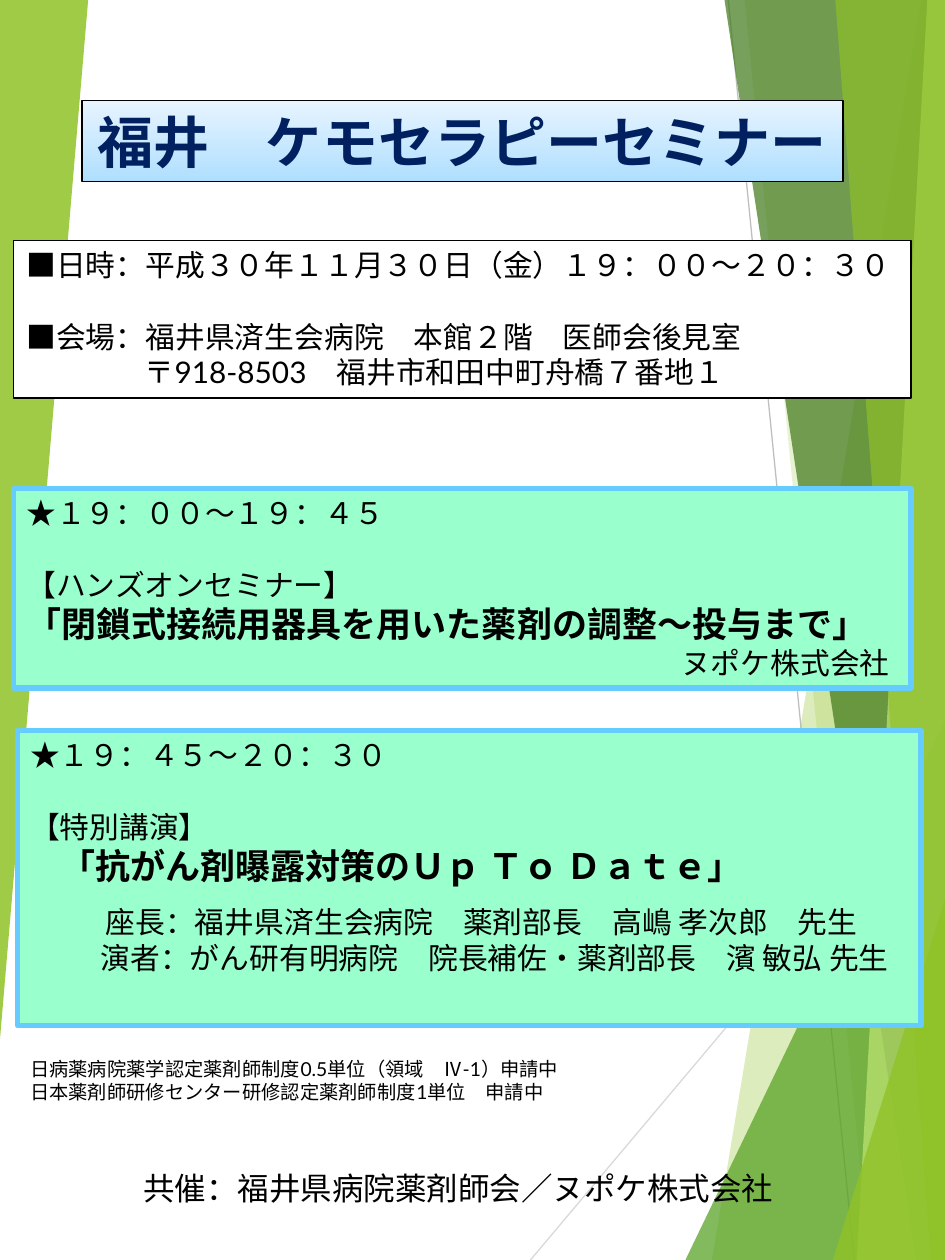
from lxml.etree import SubElement
from pptx import Presentation
from pptx.dml.color import RGBColor
from pptx.enum.shapes import MSO_CONNECTOR
from pptx.enum.text import MSO_ANCHOR, MSO_AUTO_SIZE, PP_ALIGN
from pptx.oxml.ns import qn
from pptx.util import Inches, Pt

FONT = "Lato"
BODY = 17
BLANK = 20.5

RAYS = [
    ((4.21, 10), (7.5, 6.09), "D9D9D9"),
    ((5.78, 0), (6.78, 10), "BFBFBF"),
]
FACETS = [
    ([(7.31, 0), (5.65, 10), (7.5, 10), (7.5, 0)], "90C226", 30),
    ([(5.91, 0), (6.9, 10), (7.5, 10), (7.5, 0)], "90C226", 20),
    ([(5.44, 10), (7.5, 5.72), (7.5, 10)], "54A021", 72),
    ([(5.75, 0), (7.27, 10), (7.5, 10), (7.5, 0)], "3F7819", 70),
    ([(7.36, 0), (6.8, 10), (7.5, 10), (7.5, 0)], "C0E474", 70),
    ([(6.63, 0), (7.39, 10), (7.5, 10), (7.5, 0)], "90C226", 65),
    ([(6.61, 10), (7.5, 7.14), (7.5, 10)], "90C226", 80),
    ([(0, 0), (0.7, 0), (0, 8.25)], "90C226", 85),
]


def color(value):
    """Turn a hex string into a colour."""
    return RGBColor.from_string(value)


def add_ray(page, start, end, shade):
    """Draw a thin background line."""
    ray = page.shapes.add_connector(
        MSO_CONNECTOR.STRAIGHT, *[Inches(value) for value in start + end])
    ray.line.color.rgb = color(shade)
    ray.line.width = Pt(0.75)
    SubElement(ray._element.spPr, qn("a:effectLst"))


def add_facet(page, corners, shade, opacity):
    """Draw a translucent background polygon."""
    points = [(Inches(x), Inches(y)) for x, y in corners]
    builder = page.shapes.build_freeform(*points[0])
    builder.add_line_segments(points[1:], close=True)
    facet = builder.convert_to_shape()
    facet.shadow.inherit = False
    facet.fill.solid()
    facet.fill.fore_color.rgb = color(shade)
    facet.line.fill.background()
    tint = facet._element.spPr.find(f"{qn('a:solidFill')}/{qn('a:srgbClr')}")
    SubElement(tint, qn("a:alpha"), val=str(opacity * 1000))


def add_span(para, text, size, bold=False, shade="000000"):
    """Add one formatted run to a paragraph."""
    span = para.add_run()
    span.text = text
    span.font.name = FONT
    span.font.size = Pt(size)
    span.font.bold = bold
    span.font.color.rgb = color(shade)


def set_outline(box, shade, width):
    """Give a box its border."""
    box.line.color.rgb = color(shade)
    box.line.width = Pt(width)


def add_title(page, text):
    """Format the title placeholder as a gradient banner above the background."""
    title = page.shapes.title
    page.shapes._spTree.append(title._element)
    title.left, title.top = Inches(0.65), Inches(0.8)
    title.width, title.height = Inches(6.04), Inches(0.64)
    title.fill.gradient()
    title.fill.gradient_angle = 90
    for stop, shade in zip(title.fill.gradient_stops, ("AFDFFF", "E7F4FF")):
        stop.color.rgb = color(shade)
    for stop, position in zip(title.fill.gradient_stops, (0, 1)):
        stop.position = position
    set_outline(title, "000000", 0.75)
    frame = title.text_frame
    frame.auto_size = MSO_AUTO_SIZE.NONE
    frame.vertical_anchor = MSO_ANCHOR.MIDDLE
    add_span(frame.paragraphs[0], text, 32, True, "002060")


def add_box(page, place, fill=None, outline=None):
    """Add a wrapping text box, filled and outlined on request."""
    box = page.shapes.add_textbox(*[Inches(value) for value in place])
    box.text_frame.word_wrap = True
    if fill:
        box.fill.solid()
        box.fill.fore_color.rgb = color(fill)
    if outline:
        set_outline(box, *outline)
    return box


def add_para(box, text, size=BODY, bold=False, before=0, indent=0, right=None):
    """Write a paragraph, using the box's first one while it is empty."""
    frame = box.text_frame
    para = frame.paragraphs[0]
    if para.runs:
        para = frame.add_paragraph()
    if before:
        para.space_before = Pt(before)
    if indent:
        para._p.get_or_add_pPr().set("marL", str(Inches(indent)))
    if right is not None:
        para.alignment = PP_ALIGN.RIGHT
        para._p.get_or_add_pPr().set("marR", str(Inches(right)))
    add_span(para, text, size, bold)


def add_session(page, place, time, kind, topic, indent=0):
    """Add a green programme box with its time, kind and topic."""
    box = add_box(page, place, "99FFCC", ("66CCFF", 3))
    add_para(box, time)
    add_para(box, kind, before=BLANK)
    add_para(box, topic, 20, True, indent=indent)
    return box


def main():
    """Build the seminar poster."""
    deck = Presentation()
    deck.slide_width, deck.slide_height = Inches(7.5), Inches(10)
    page = deck.slides.add_slide(deck.slide_layouts[5])
    for ray in RAYS:
        add_ray(page, *ray)
    for facet in FACETS:
        add_facet(page, *facet)
    add_title(page, "福井　ケモセラピーセミナー")

    venue = add_box(page, (0.11, 1.91, 7.12, 1.25), "FFFFFF", ("000000", 0.75))
    add_para(venue, "■日時：平成３０年１１月３０日（金）１９：００～２０：３０")
    add_para(venue, "■会場：福井県済生会病院　本館２階　医師会後見室", before=BLANK)
    add_para(venue, "〒918-8503　福井市和田中町舟橋７番地１", indent=0.94)

    workshop = add_session(
        page, (0.11, 3.88, 7.12, 1.58), "★１９：００～１９：４５",
        "【ハンズオンセミナー】", "「閉鎖式接続用器具を用いた薬剤の調整～投与まで」")
    add_para(workshop, "ヌポケ株式会社", right=0.07)

    lecture = add_session(
        page, (0.14, 5.8, 7.17, 2.34), "★１９：４５～２０：３０",
        "【特別講演】", "「抗がん剤曝露対策のＵｐ Ｔｏ Ｄａｔｅ」", 0.24)
    add_para(lecture, "座長：福井県済生会病院　薬剤部長　高嶋 孝次郎　先生",
             before=10, indent=0.6)
    add_para(lecture, "演者：がん研有明病院　院長補佐・薬剤部長　濱 敏弘 先生", indent=0.56)

    hosts = add_box(page, (1.04, 9.23, 5.25, 0.4))
    add_para(hosts, "共催：福井県病院薬剤師会／ヌポケ株式会社", 18)
    credits = add_box(page, (0.14, 8.34, 7.17, 0.47))
    add_para(credits, "日病薬病院薬学認定薬剤師制度0.5単位（領域　Ⅳ-1）申請中", 11)
    add_para(credits, "日本薬剤師研修センター研修認定薬剤師制度1単位　申請中", 11)
    deck.save("out.pptx")


if __name__ == "__main__":
    main()
